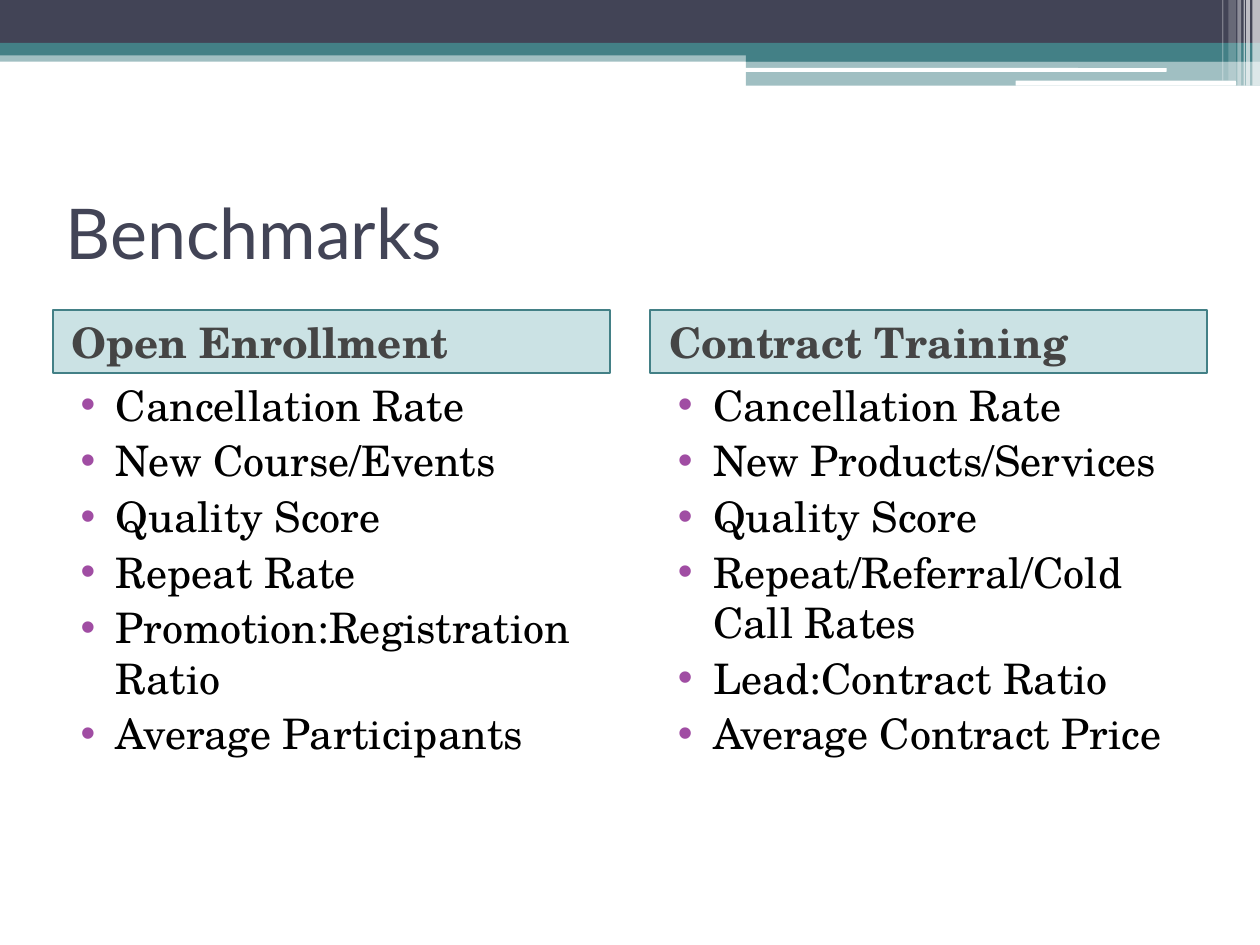
from lxml import etree
from pptx import Presentation
from pptx import util as u
from pptx.dml.color import RGBColor
from pptx.enum import shapes, text
from pptx.oxml import ns

TEAL, NAVY, WHITE = "438086", "424456", "FFFFFF"
SERIF = "TeX Gyre Schola"
COLUMNS = [
    ("Open Enrollment", [
        "Cancellation Rate", "New Course/Events", "Quality Score",
        "Repeat Rate", "Promotion:Registration Ratio",
        "Average Participants"]),
    ("Contract Training", [
        "Cancellation Rate", "New Products/Services", "Quality Score",
        "Repeat/Referral/Cold Call Rates", "Lead:Contract Ratio",
        "Average Contract Price"]),
]


def paint(fill, color, alpha=100):
    """Set a solid fill from a hex colour and an opacity in percent."""
    fill.solid()
    fill.fore_color.rgb = RGBColor.from_string(color)
    if alpha < 100:
        node = fill.fore_color._xFill[0]
        etree.SubElement(node, ns.qn("a:alpha"), val=str(alpha * 1000))


def place(shape, box):
    """Move a shape to a box given in inches."""
    shape.left, shape.top, shape.width, shape.height = map(u.Inches, box)


def add_bar(slide, box, color, alpha=100, kind="RECTANGLE"):
    """Add a plain bar without outline or shadow."""
    bar = slide.shapes.add_shape(
        shapes.MSO_SHAPE[kind], *map(u.Inches, box))
    bar.shadow.inherit = False
    bar.line.fill.background()
    paint(bar.fill, color, alpha)


def write(shape, lines, size=24, font=SERIF, color="000000", bold=False,
          anchor="TOP", before=0, margin=0, indent=0, bullet=None):
    """Fill a placeholder with formatted paragraphs."""
    frame = shape.text_frame
    frame.text = "\n".join(lines)
    frame.word_wrap = True
    frame.auto_size = text.MSO_AUTO_SIZE.NONE
    frame.vertical_anchor = text.MSO_ANCHOR[anchor]
    for para in frame.paragraphs:
        para.alignment = text.PP_ALIGN.LEFT
        para.space_before = u.Pt(before)
        face = para.runs[0].font
        face.size, face.name, face.bold = u.Pt(size), font, bold
        face.color.rgb = RGBColor.from_string(color)
        props = para._p.get_or_add_pPr()
        props.set("marL", str(u.Inches(margin)))
        props.set("indent", str(u.Inches(indent)))
        if bullet:
            tint = etree.SubElement(props, ns.qn("a:buClr"))
            etree.SubElement(tint, ns.qn("a:srgbClr"), val=bullet)
            etree.SubElement(props, ns.qn("a:buChar"), char="•")


def add_band(slide, width):
    """Draw the layered band along the top edge."""
    half = 5.92
    rest = width - half
    add_bar(slide, (0, 0.4, width, 0.09), TEAL, 50)
    add_bar(slide, (0, 0, width, 0.34), NAVY)
    add_bar(slide, (0, 0.34, width, 0.1), TEAL)
    add_bar(slide, (half, 0.39, rest, 0.1), TEAL)
    add_bar(slide, (half, 0.48, rest, 0.2), TEAL, 50)
    for box in ((5.91, 0.54, 3.35, 0.03), (8.06, 0.64, 1.75, 0.04)):
        add_bar(slide, box, WHITE, kind="ROUNDED_RECTANGLE")
    stripes = [(9.94, 0.06, 0.68, 65), (9.89, 0.03, 0.68, 65),
               (9.87, 0.01, 0.68, 60), (9.82, 0.03, 0.68, 40),
               (9.75, 0.06, 0.64, 20), (9.7, 0.01, 0.64, 30)]
    for left, wide, high, alpha in stripes:
        add_bar(slide, (left, 0, wide, high), WHITE, alpha)


def fill_column(head, body, box, title, items):
    """Set a shaded heading above its bulleted list inside a box."""
    left, top, width, height = box
    strip = 0.5
    place(head, (left, top, width, strip))
    paint(head.fill, "328E97", 25)
    paint(head.line.fill, TEAL)
    head.line.width = u.Pt(1)
    write(head, [title], color="454545", bold=True, anchor="MIDDLE",
          before=3, margin=0.05)
    place(body, (left, top + strip, width, height - strip))
    write(body, items, before=3, margin=0.4, indent=-0.28, bullet="A04DA3")


def main():
    """Build and save the benchmark comparison slide."""
    deck = Presentation()
    deck.slide_width, deck.slide_height = u.Inches(10), u.Inches(7.5)
    slide = deck.slides.add_slide(deck.slide_layouts[4])
    add_band(slide, 10)
    title, *parts = slide.placeholders
    place(title, (0.42, 1.25, 9.17, 1.17))
    write(title, ["Benchmarks"], size=40, font="Lato", color=NAVY,
          anchor="MIDDLE")
    for col, (name, items) in enumerate(COLUMNS):
        head, body = parts[2 * col:2 * col + 2]
        box = (0.42 + col * 4.74, 2.46, 4.42, 4.75)
        fill_column(head, body, box, name, items)
    deck.save("out.pptx")


if __name__ == "__main__":
    main()
